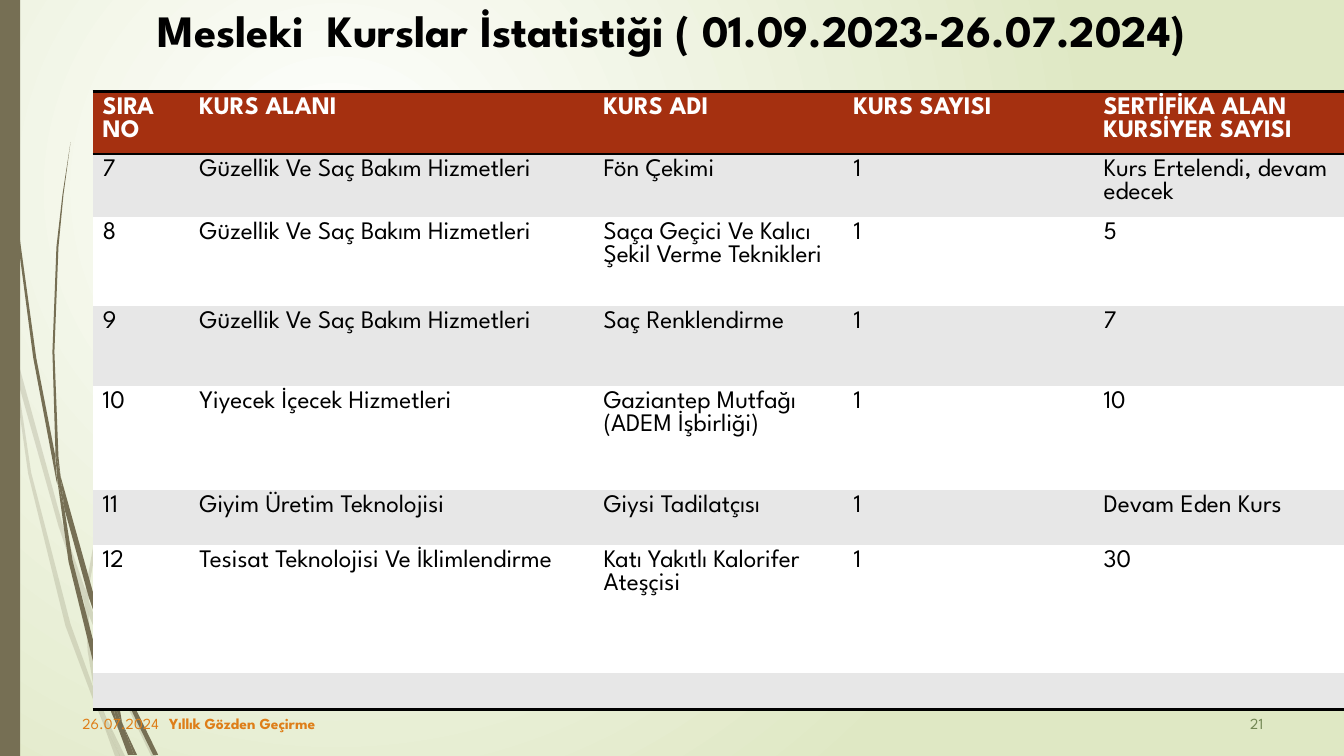
from lxml import etree
from pptx import Presentation
from pptx.dml.color import RGBColor
from pptx.enum.shapes import MSO_SHAPE
from pptx.enum.text import MSO_ANCHOR, PP_ALIGN
from pptx.oxml import parse_xml
from pptx.oxml.ns import nsdecls, qn
from pptx.util import Pt

RECTANGLE = MSO_SHAPE.RECTANGLE
MIDDLE = MSO_ANCHOR.MIDDLE
LEFT, CENTER, RIGHT = PP_ALIGN.LEFT, PP_ALIGN.CENTER, PP_ALIGN.RIGHT
BLACK = RGBColor(0x00, 0x00, 0x00)
WHITE = RGBColor(0xFF, 0xFF, 0xFF)
PALE_GREEN = RGBColor(0xDF, 0xE8, 0xC4)
BROWN = RGBColor(0x76, 0x6F, 0x54)
ORANGE = RGBColor(0xDE, 0x7E, 0x18)
GREEN = RGBColor(0x72, 0x86, 0x53)
RUST = RGBColor(0xA5, 0x30, 0x10)
GREY = RGBColor(0xE7, 0xE7, 0xE7)
FONT = "League Spartan"
NO_STYLE = "{2D5ABB26-0587-4C30-8999-92F81FD0307C}"
GRID_UNIT = Pt(0.72)


def write_text(paragraph, text, color, formats):
    run = paragraph.add_run()
    run.text = text
    run.font.color.rgb = color
    for name, value in {"name": FONT, **formats}.items():
        setattr(run.font, name, value)
    run._r.get_or_add_rPr().set("kern", "1200")


def add_border(cell, tag):
    cell._tc.get_or_add_tcPr().append(parse_xml(
        f'<a:{tag} {nsdecls("a")} w="{Pt(2)}"><a:solidFill>'
        f'<a:srgbClr val="{BLACK}"/></a:solidFill></a:{tag}>'))


presentation = Presentation()
presentation.slide_width = Pt(960)
presentation.slide_height = Pt(540)
slide = presentation.slides.add_slide(presentation.slide_layouts[6])

background = slide.background.fill
background.gradient()
for stop, color in zip(background.gradient_stops, (WHITE, PALE_GREEN)):
    stop.color.rgb = color
gradient = slide._element.find(".//" + qn("a:gradFill"))
gradient.replace(gradient.find(qn("a:lin")), parse_xml(
    f'<a:path {nsdecls("a")} path="circle">'
    '<a:fillToRect l="50000" t="50000" r="100000" b="100000"/></a:path>'))

pale_wisps = [
    [(11, 350), (9, 322), (0, 282), (0, 299), (10, 344)],
    [(58, 522), (84, 599), (85, 586), (62, 520), (14, 345), (17, 376)],
    [(92, 607), (88, 596), (88, 610), (123, 694), (150, 750), (155, 750), (127, 692)],
    [(119, 750), (124, 750), (105, 711)],
    [(93, 683), (70, 619), (31, 469), (17, 376), (11, 350), (28, 470), (65, 621),
     (92, 693), (101, 714), (99, 707)],
    [(84, 599), (87, 646), (93, 683), (96, 692), (105, 711), (103, 706), (91, 646),
     (88, 610), (88, 608)],
    [(88, 584), (110, 462), (160, 349), (229, 245), (268, 198), (290, 175), (312, 154),
     (312, 153), (289, 175), (268, 197), (228, 244), (158, 348), (107, 461), (85, 584),
     (85, 586), (88, 596)],
    [(101, 714), (114, 750), (119, 750)],
    [(88, 608), (88, 610), (88, 596), (85, 586), (84, 599)],
    [(96, 692), (93, 683), (99, 707), (101, 714), (119, 750), (105, 711)],
]
dark_wisps = [
    [(7, 110), (17, 233), (33, 355), (56, 477), (57, 481), (55, 457), (55, 453),
     (36, 355), (19, 232), (8, 109), (5, 48), (4, 0), (3, 0), (4, 48)],
    [(88, 592), (106, 645), (106, 631), (93, 590), (60, 472), (64, 505)],
    [(113, 649), (110, 641), (111, 656), (132, 708), (152, 749), (157, 749), (136, 706)],
    [(110, 691), (98, 657), (72, 556), (64, 505), (57, 477), (68, 557), (93, 659),
     (111, 708), (117, 722), (116, 717)],
    [(60, 472), (58, 453), (54, 349), (58, 245), (63, 193), (70, 141), (62, 193),
     (56, 245), (52, 349), (55, 449)],
    [(133, 749), (136, 749), (122, 719)],
    [(57, 477), (64, 505), (60, 472), (55, 449), (55, 453)],
    [(111, 633), (125, 552), (158, 476), (205, 406), (231, 374), (245, 359), (261, 344),
     (260, 344), (245, 358), (231, 373), (204, 405), (156, 474), (122, 551), (106, 631),
     (110, 641)],
    [(117, 722), (127, 749), (131, 749)],
    [(106, 645), (110, 691), (116, 706), (122, 719), (121, 716), (111, 656), (109, 651)],
    [(106, 645), (109, 651), (111, 656), (110, 641), (106, 631)],
    [(116, 706), (110, 691), (116, 717), (117, 722), (130, 749), (133, 749), (122, 719)],
]
for wisps, opacity in ((pale_wisps, 20), (dark_wisps, 100)):
    group = slide.shapes.add_group_shape()
    for start, *points in wisps:
        builder = group.shapes.build_freeform(*start, scale=GRID_UNIT)
        builder.add_line_segments(points, close=True)
        wisp = builder.convert_to_shape()
        wisp.shadow.inherit = False
        wisp.fill.solid()
        wisp.fill.fore_color.rgb = BROWN
        wisp.line.fill.background()
        if opacity < 100:
            color_element = wisp._element.spPr.find(".//" + qn("a:srgbClr"))
            etree.SubElement(color_element, qn("a:alpha"), val=str(opacity * 1000))

side_bar = slide.shapes.add_shape(RECTANGLE, Pt(0), Pt(0), Pt(14.4), Pt(540))
side_bar.shadow.inherit = False
side_bar.fill.solid()
side_bar.fill.fore_color.rgb = BROWN
side_bar.line.fill.background()

labels = [
    ("26.07.2024", (51.8, 502.6, 216, 28.8), LEFT, ORANGE, {"size": Pt(11)}),
    ("Yıllık Gözden Geçirme", (113.8, 502.6, 324, 28.8), LEFT, ORANGE,
     {"size": Pt(11), "bold": True}),
    ("21", (693.4, 502.6, 216, 28.8), RIGHT, GREEN, {"size": Pt(11)}),
    ("Mesleki  Kurslar İstatistiği ( 01.09.2023-26.07.2024)", (66.2, 0, 828, 41.8),
     CENTER, BLACK, {"size": Pt(32), "bold": True}),
]
for text, box, alignment, color, formats in labels:
    label = slide.shapes.add_textbox(*map(Pt, box))
    label.text_frame.word_wrap = True
    label.text_frame.vertical_anchor = MIDDLE
    paragraph = label.text_frame.paragraphs[0]
    paragraph.alignment = alignment
    write_text(paragraph, text, color, formats)

beauty = "Güzellik Ve Saç Bakım Hizmetleri"
courses = [
    ("SIRA NO", "KURS ALANI", "KURS ADI", "KURS SAYISI", "SERTİFİKA ALAN KURSİYER SAYISI"),
    ("7", beauty, "Fön Çekimi", "1", "Kurs Ertelendi, devam edecek"),
    ("8", beauty, "Saça Geçici Ve Kalıcı Şekil Verme Teknikleri", "1", "5"),
    ("9", beauty, "Saç Renklendirme", "1", "7"),
    ("10", "Yiyecek İçecek Hizmetleri", "Gaziantep Mutfağı (ADEM İşbirliği)", "1", "10"),
    ("11", "Giyim Üretim Teknolojisi", "Giysi Tadilatçısı", "1", "Devam Eden Kurs"),
    ("12", "Tesisat Teknolojisi Ve İklimlendirme", "Katı Yakıtlı Kalorifer Ateşçisi",
     "1", "30"),
    ("",) * 5,
]
column_widths = [69.1, 288.7, 178.6, 178.6, 178.6]
row_heights = [44.6, 44.6, 64.1, 56.9, 74.2, 39.6, 91.4, 25.9]
table = slide.shapes.add_table(
    len(courses), len(column_widths), Pt(66.2), Pt(65.5),
    Pt(sum(column_widths)), Pt(sum(row_heights))).table
table.first_row = False
table.horz_banding = False
table._tbl.tblPr.find(qn("a:tableStyleId")).text = NO_STYLE
for column, width in zip(table.columns, column_widths):
    column.width = Pt(width)
last_row = len(courses) - 1
for row_index, (course, height) in enumerate(zip(courses, row_heights)):
    table.rows[row_index].height = Pt(height)
    header = row_index == 0
    row_fill = RUST if header else (GREY if row_index % 2 else WHITE)
    for column_index, text in enumerate(course):
        cell = table.cell(row_index, column_index)
        cell.margin_bottom = Pt(0)
        if header:
            add_border(cell, "lnT")
        if row_index in (0, last_row):
            add_border(cell, "lnB")
        cell.fill.solid()
        cell.fill.fore_color.rgb = row_fill
        paragraph = cell.text_frame.paragraphs[0]
        paragraph.line_spacing = Pt(16.5)
        if text:
            write_text(paragraph, text, WHITE if header else BLACK,
                       {"size": Pt(18), "bold": header})
        else:
            paragraph._p.get_or_add_endParaRPr().set("sz", "1200")

presentation.save("out.pptx")
